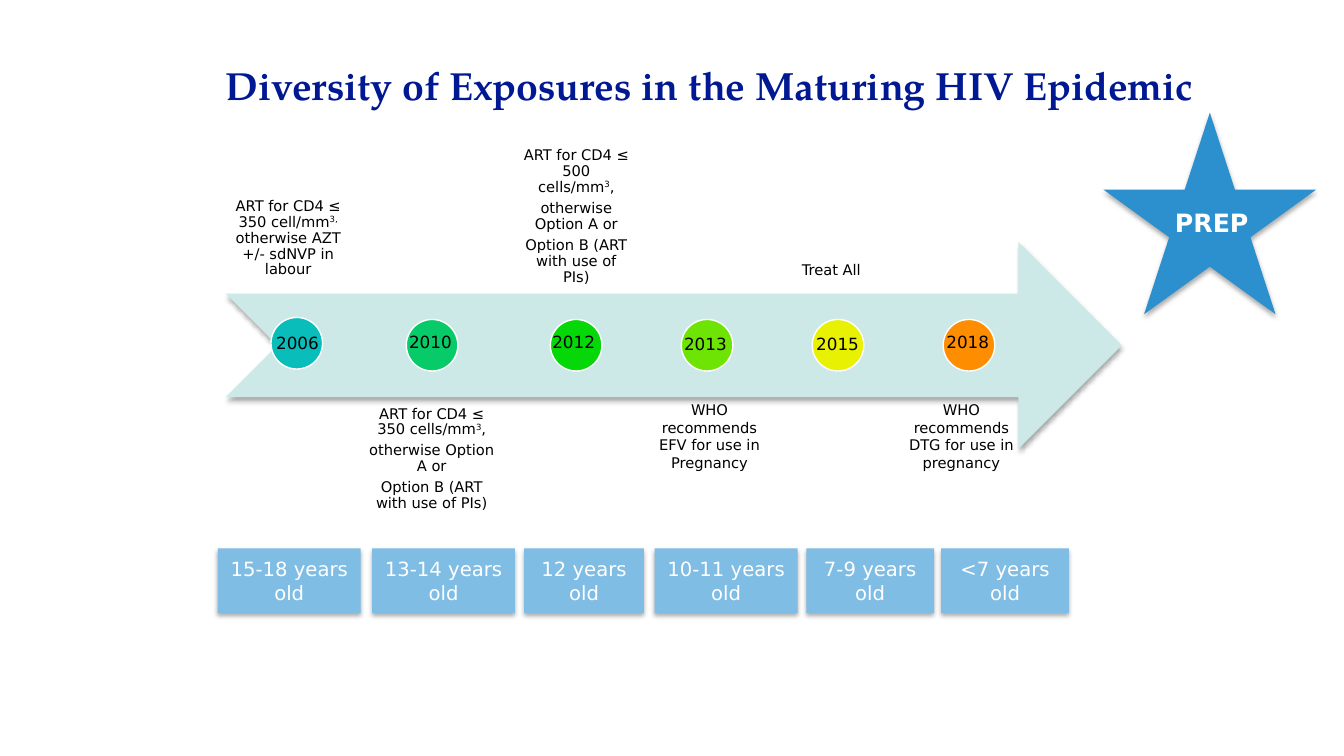
"""Build the timeline slide on exposures in the maturing HIV epidemic."""
from lxml import etree
from pptx import Presentation
from pptx.dml.color import RGBColor
from pptx.enum.shapes import MSO_SHAPE as Preset
from pptx.enum.text import MSO_ANCHOR as Anchor, PP_ALIGN as Align
from pptx.oxml.ns import qn
from pptx.util import Cm, Pt

COLOURS = {
    "navy": "011893", "black": "000000", "white": "FFFFFF", "arrow": "CCE8E7",
    "star": "2C90CF", "age": "7FBDE4", "teal": "08BDBA", "emerald": "07CA68",
    "green": "05D708", "lime": "6EE404", "yellow": "E8F102", "orange": "FF8D00",
}
SANS = "DejaVu Sans"
NOTE_FONT = {"name": SANS, "size": Pt(10.5)}
YEAR_FONT = {"name": SANS, "size": Pt(12)}
AGE_FONT = {"name": SANS, "size": Pt(14)}
STAR_FONT = {"name": SANS, "size": Pt(18), "bold": True}
TITLE_FONT = {"name": "TeX Gyre Pagella", "size": Pt(28), "bold": True}
CENTRED = {"alignment": Align.CENTER}
LEFT = {"alignment": Align.LEFT}
TIGHT = {"alignment": Align.CENTER, "line_spacing": 0.9, "space_after": Pt(3.7)}


def write(box, texts, font, layout, colour="black", anchor=Anchor.TOP, inset=None):
    """Fill a box with paragraphs; text between carets is superscript."""
    frame = box.text_frame
    frame.word_wrap = True
    frame.vertical_anchor = anchor
    if inset is not None:
        for side in ("left", "top", "right", "bottom"):
            setattr(frame, f"margin_{side}", inset)
    for index, text in enumerate(texts):
        para = frame.add_paragraph() if index else frame.paragraphs[0]
        for key, value in layout.items():
            setattr(para, key, value)
        for part, words in enumerate(text.split("^")):
            span = para.add_run()
            span.text = words
            for key, value in font.items():
                setattr(span.font, key, value)
            span.font.color.rgb = RGBColor.from_string(COLOURS[colour])
            if part % 2:
                span.font._element.set("baseline", "30000")


def draw(page, preset, place, fill, outlined=False):
    """Add a filled shape with either a white outline or a soft shadow."""
    shape = page.shapes.add_shape(preset, *map(Cm, place))
    shape.fill.solid()
    shape.fill.fore_color.rgb = RGBColor.from_string(COLOURS[fill])
    shape.shadow.inherit = False
    if outlined:
        shape.line.color.rgb = RGBColor.from_string(COLOURS["white"])
        shape.line.width = Pt(1)
        return shape
    shape.line.fill.background()
    effects = shape._element.spPr.find(qn("a:effectLst"))
    shadow = etree.SubElement(effects, qn("a:outerShdw"), blurRad="44450",
                              dist="27940", dir="5400000", rotWithShape="0")
    black = etree.SubElement(shadow, qn("a:srgbClr"), val=COLOURS["black"])
    etree.SubElement(black, qn("a:alpha"), val="32000")
    return shape


deck = Presentation()
deck.slide_width, deck.slide_height = Cm(33.87), Cm(19.05)
page = deck.slides.add_slide(deck.slide_layouts[5])

title = page.shapes.title
title.left, title.top, title.width, title.height = map(Cm, (2.63, 1.4, 30.5, 1.45))
write(title, ["Diversity of Exposures in the Maturing HIV Epidemic"],
      TITLE_FONT, CENTRED, "navy", Anchor.MIDDLE)

draw(page, Preset.NOTCHED_RIGHT_ARROW, (5.69, 6.1, 22.58, 5.21), "arrow")

years = [
    ("2006", "teal", 6.83, 8.0, 6.71, 8.26),
    ("2010", "emerald", 10.24, 8.05, 10.06, 8.23),
    ("2012", "green", 13.87, 8.05, 13.67, 8.23),
    ("2013", "lime", 17.17, 8.05, 16.99, 8.28),
    ("2015", "yellow", 20.47, 8.05, 20.32, 8.28),
    ("2018", "orange", 23.77, 8.05, 23.6, 8.23),
]
for year, colour, left, top, label_left, label_top in years:
    draw(page, Preset.OVAL, (left, top, 1.3, 1.3), colour, outlined=True)
    label = page.shapes.add_textbox(Cm(label_left), Cm(label_top), Cm(2.29), Cm(0.77))
    write(label, [year], YEAR_FONT, LEFT)

options = ["otherwise Option A or", "Option B (ART with use of PIs)"]
guidelines = [
    ((5.69, 4.27, 3.15, 2.97), Anchor.BOTTOM,
     ["ART for CD4 ≤ 350 cell/mm^3,^ otherwise AZT +/- sdNVP in labour"]),
    ((8.99, 10.01, 3.78, 5.21), Anchor.TOP,
     ["ART for CD4 ≤ 350 cells/mm^3^,", *options]),
    ((12.95, 2.21, 3.15, 5.21), Anchor.BOTTOM,
     ["ART for CD4 ≤ 500 cells/mm^3^,", *options]),
]
for place, anchor, texts in guidelines:
    box = page.shapes.add_textbox(*map(Cm, place))
    write(box, texts, NOTE_FONT, TIGHT, anchor=anchor, inset=Cm(0.23))

recommendations = [
    ((16.18, 9.98, 3.4, 2.06), CENTRED, "WHO recommends EFV for use in Pregnancy"),
    ((19.96, 6.45, 3.4, 0.71), LEFT, "Treat All"),
    ((22.53, 9.98, 3.4, 2.06), CENTRED, "WHO recommends DTG for use in pregnancy"),
]
for place, layout, text in recommendations:
    write(page.shapes.add_textbox(*map(Cm, place)), [text], NOTE_FONT, layout)

draw(page, Preset.STAR_5_POINT, (27.81, 2.84, 5.36, 5.08), "star")
star_label = page.shapes.add_textbox(Cm(29.36), Cm(5.11), Cm(2.4), Cm(1.02))
write(star_label, ["PREP"], STAR_FONT, LEFT, "white")

ages = [
    ("15-18", 5.49, 3.6), ("13-14", 9.38, 3.6), ("12", 13.21, 3.02),
    ("10-11", 16.5, 3.6), ("7-9", 20.32, 3.22), ("<7", 23.72, 3.22),
]
for age, left, width in ages:
    band = draw(page, Preset.RECTANGLE, (left, 13.82, width, 1.63), "age")
    write(band, [f"{age} years old"], AGE_FONT, CENTRED, "white", Anchor.MIDDLE)

deck.save("out.pptx")
